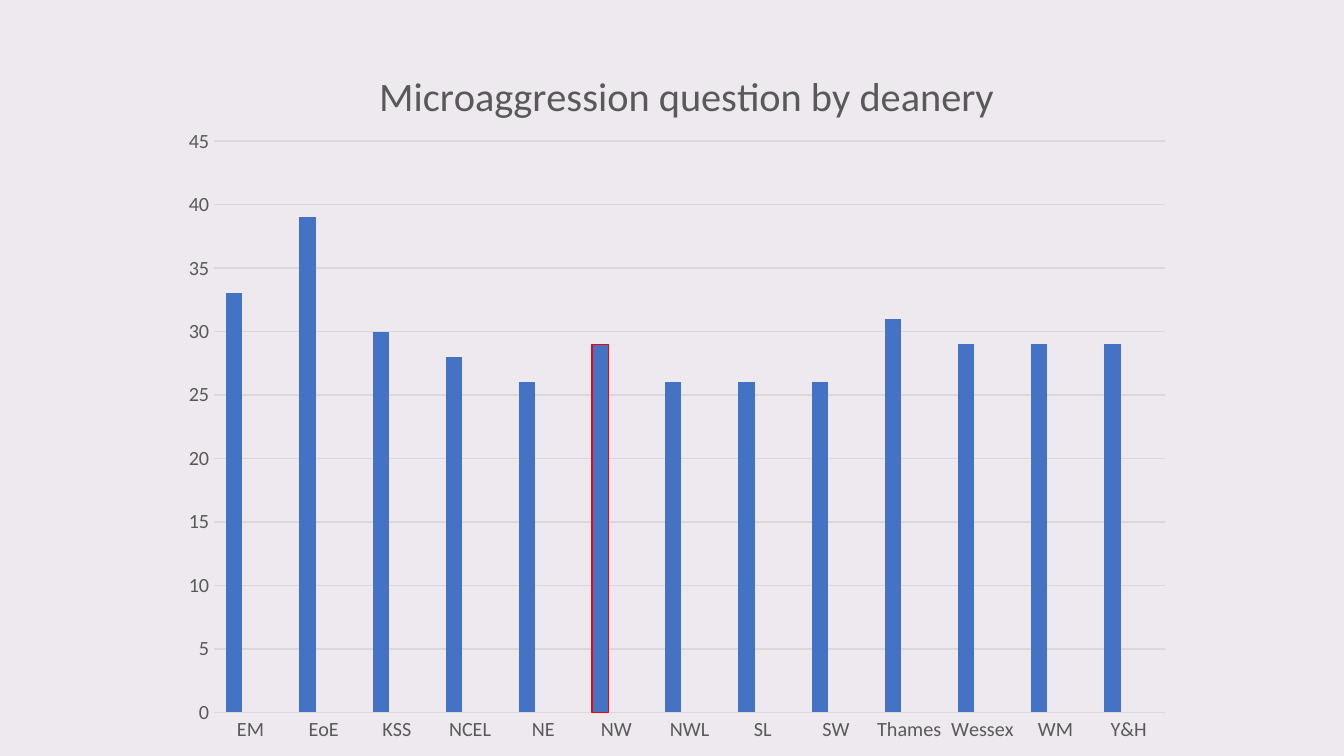
from dataclasses import dataclass

from lxml import etree
from pptx import Presentation
from pptx.chart.axis import CategoryAxis, ValueAxis
from pptx.chart.chart import Chart
from pptx.chart.data import CategoryChartData
from pptx.dml.color import RGBColor
from pptx.enum.chart import XL_CHART_TYPE, XL_TICK_MARK
from pptx.oxml.ns import qn
from pptx.slide import Slide
from pptx.text.text import Font
from pptx.util import Inches, Pt

COLUMNS = XL_CHART_TYPE.COLUMN_CLUSTERED
NO_TICK = XL_TICK_MARK.NONE
FONT_NAME = "Calibri"
COLORS = {
    "background": "EEE8EF",
    "text": "595959",
    "grid": "D9D9D9",
    "blue": "4472C4",
    "orange": "ED7D31",
    "gray": "A5A5A5",
    "highlight": "FF0000",
}
SCORES = {
    "EM": 33, "EoE": 39, "KSS": 30, "NCEL": 28, "NE": 26, "NW": 29, "NWL": 26,
    "SL": 26, "SW": 26, "Thames": 31, "Wessex": 29, "WM": 29, "Y&H": 29,
}
HIGHLIGHTED = "NW"


@dataclass(frozen=True)
class ColumnSeries:
    name: str
    values: list[int | None]
    color: str


EMPTY = [None] * len(SCORES)
SERIES = [
    ColumnSeries("Series 1", list(SCORES.values()), "blue"),
    ColumnSeries("Series 2", EMPTY, "orange"),
    ColumnSeries("Series 3", EMPTY, "gray"),
]


def rgb(name: str) -> RGBColor:
    return RGBColor.from_string(COLORS[name])


def style_font(font: Font, size: int) -> None:
    font.name = FONT_NAME
    font.size = Pt(size)
    font.bold = False
    font.color.rgb = rgb("text")


def set_layout(parent: etree._Element, index: int, settings: dict[str, str | float]) -> None:
    """Place a chart part by fractions of the chart area."""
    for old in parent.findall(qn("c:layout")):
        parent.remove(old)
    layout = etree.Element(qn("c:layout"))
    manual = etree.SubElement(layout, qn("c:manualLayout"))
    for tag, value in settings.items():
        etree.SubElement(manual, qn(f"c:{tag}")).set("val", str(value))
    parent.insert(index, layout)


def style_axis(axis: CategoryAxis | ValueAxis) -> None:
    axis.major_tick_mark = NO_TICK
    axis.minor_tick_mark = NO_TICK
    axis.format.line.fill.background()
    style_font(axis.tick_labels.font, 12)


def add_title(chart: Chart) -> None:
    chart.has_title = True
    title = chart.chart_title
    para = title.text_frame.paragraphs[0]
    para.text = "Microaggression question by deanery"
    style_font(para.font, 24)
    set_layout(title._element, 1, {"xMode": "edge", "yMode": "edge", "x": 0.2, "y": 0.04})


def add_deanery_chart(slide: Slide) -> None:
    data = CategoryChartData()
    data.categories = list(SCORES)
    for series in SERIES:
        data.add_series(series.name, series.values)
    frame = slide.shapes.add_chart(
        COLUMNS, Inches(1.39), Inches(0.27), Inches(8.42), Inches(5.98), data
    )
    chart = frame.chart
    chart.has_legend = False
    style_font(chart.font, 10)
    add_title(chart)

    plot = chart.plots[0]
    plot.gap_width = 150
    plot.overlap = 0
    plot.vary_by_categories = False
    for column, series in zip(plot.series, SERIES):
        column.format.fill.solid()
        column.format.fill.fore_color.rgb = rgb(series.color)
    point = plot.series[0].points[list(SCORES).index(HIGHLIGHTED)].format
    point.fill.solid()
    point.fill.fore_color.rgb = rgb("blue")
    point.line.color.rgb = rgb("highlight")
    point.line.width = Pt(0.75)

    style_axis(chart.category_axis)
    value_axis = chart.value_axis
    style_axis(value_axis)
    value_axis.minimum_scale = 0
    value_axis.maximum_scale = 45
    value_axis.major_unit = 5
    value_axis.has_major_gridlines = True
    grid = value_axis.major_gridlines.format.line
    grid.color.rgb = rgb("grid")
    grid.width = Pt(0.75)

    plot_area = chart._chartSpace.find(f".//{qn('c:plotArea')}")
    set_layout(plot_area, 0, {
        "layoutTarget": "inner", "xMode": "edge", "yMode": "edge",
        "x": 0.045, "y": 0.15, "w": 0.934, "h": 0.79,
    })


def main() -> None:
    deck = Presentation()
    deck.slide_width = Inches(11.11)
    deck.slide_height = Inches(6.25)
    page = deck.slides.add_slide(deck.slide_layouts[6])
    page.background.fill.solid()
    page.background.fill.fore_color.rgb = rgb("background")
    add_deanery_chart(page)
    deck.save("out.pptx")


if __name__ == "__main__":
    main()
